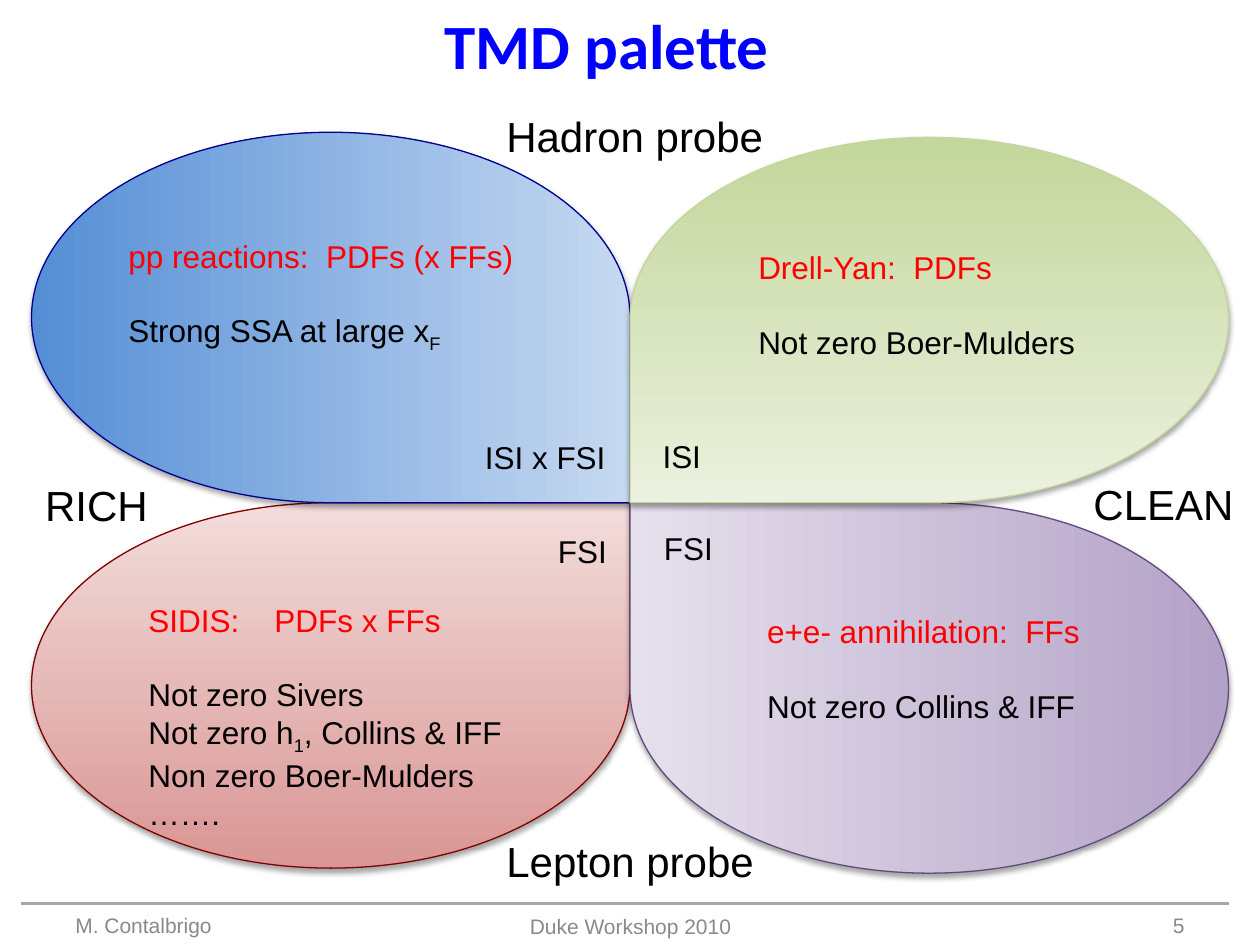
from lxml import etree
from pptx import Presentation
from pptx.dml.color import RGBColor
from pptx.enum.shapes import MSO_CONNECTOR, MSO_SHAPE
from pptx.enum.text import MSO_ANCHOR, PP_ALIGN
from pptx.oxml import parse_xml
from pptx.oxml.ns import nsdecls, qn
from pptx.util import Inches, Pt

TEARDROP = MSO_SHAPE.TEAR
STRAIGHT = MSO_CONNECTOR.STRAIGHT
TOP, MIDDLE, BOTTOM = MSO_ANCHOR.TOP, MSO_ANCHOR.MIDDLE, MSO_ANCHOR.BOTTOM
LEFT, CENTER, RIGHT = PP_ALIGN.LEFT, PP_ALIGN.CENTER, PP_ALIGN.RIGHT
TITLE_ONLY = 5

THEME = {
    "title": {"name": "Calibri", "size": Pt(36), "bold": True, "color": "0000FF"},
    "heading": {"name": "Arial", "size": Pt(18), "color": "FF0000"},
    "body": {"name": "Arial", "size": Pt(18), "color": "000000"},
    "axis": {"name": "Arial", "size": Pt(24), "color": "000000"},
    "footer": {"name": "Arial", "size": Pt(12), "color": "898989"},
    "rule": "A6A6A6",
}
HEADING_GAP = Pt(21)

# The petals meet at this point; each lists its side of it, rotation and colours.
CENTRE_X, CENTRE_Y = 5, 3.99
PETAL_WIDTH = 4.75
PETALS = [
    # side x, side y, rotation, height, dark, light, outline
    (-1, 1, 0, 2.9, "D99694", "F2DCDB", "800000"),
    (-1, -1, 90, 2.94, "558ED5", "C6D9F1", "000090"),
    (1, 1, 270, 2.94, "B3A2C7", "E6E0EC", "604A7B"),
    (1, -1, 180, 2.9, "C3D69B", "EBF1DE", "C3D69B"),
]

# In a body line, every second part is a subscript.
REACTIONS = [
    # box, heading label, heading value, tab position, body lines
    ((5.99, 4.81, 3.06, 1.01), "e+e- annihilation:", "FFs", 2.05,
     [("Not zero Collins & IFF",)]),
    ((5.92, 1.92, 3, 1.01), "Drell-Yan:", "PDFs", 1.23,
     [("Not zero Boer-Mulders",)]),
    ((1.08, 4.72, 3.25, 1.92), "SIDIS:", "PDFs x FFs", 1,
     [("Not zero Sivers",), ("Not zero h", "1", ", Collins & IFF"),
      ("Non zero Boer-Mulders",), ("…….",)]),
    ((0.92, 1.83, 3.42, 1.01), "pp reactions:", "PDFs (x FFs)", 1.57,
     [("Strong SSA at large x", "F")]),
]

LABELS = [
    # text, box, style
    ("ISI", (5.16, 3.42, 0.51, 0.4), "body"),
    ("FSI", (5.17, 4.15, 0.59, 0.4), "body"),
    ("ISI x FSI", (3.75, 3.43, 1.17, 0.4), "body"),
    ("FSI", (4.33, 4.17, 0.59, 0.4), "body"),
    ("RICH", (0.26, 3.76, 1.02, 0.5), "axis"),
    ("CLEAN", (8.58, 3.75, 1.32, 0.5), "axis"),
    ("Hadron probe", (3.92, 0.83, 2.26, 0.5), "axis"),
    ("Lepton probe", (3.92, 6.58, 2.19, 0.5), "axis"),
]

FOOTERS = [
    ("M. Contalbrigo", (0.5, 7.09, 2.33, 0.4), LEFT),
    ("5", (7.17, 7.09, 2.33, 0.4), RIGHT),
    ("Duke Workshop 2010", (3.42, 7.1, 3.17, 0.4), CENTER),
]

TITLE = ("TMD palette", (3.41, 0, 2.81, 0.71))
RULE = (0.17, 7.17, 9.75, 7.17)


def add_run(paragraph, text, style):
    run = paragraph.add_run()
    run.text = text
    for name, value in THEME[style].items():
        if name == "color":
            run.font.color.rgb = RGBColor.from_string(value)
        else:
            setattr(run.font, name, value)
    return run


def add_box(slide, box, wrap=True, anchor=TOP):
    """Add an empty text box and return its text frame."""
    frame = slide.shapes.add_textbox(*map(Inches, box)).text_frame
    frame.word_wrap = wrap
    frame.vertical_anchor = anchor
    return frame


def add_petal(slide, side_x, side_y, rotation, height, dark, light, outline):
    width, tall = PETAL_WIDTH, height
    middle_x = CENTRE_X + side_x * width / 2
    middle_y = CENTRE_Y + side_y * tall / 2
    if rotation % 180:
        width, tall = tall, width
    petal = slide.shapes.add_shape(
        TEARDROP, Inches(middle_x - width / 2), Inches(middle_y - tall / 2),
        Inches(width), Inches(tall))
    petal.rotation = rotation
    petal.fill.gradient()
    petal.fill.gradient_angle = 90
    for stop, color in zip(petal.fill.gradient_stops, (dark, light)):
        stop.color.rgb = RGBColor.from_string(color)
    petal.line.color.rgb = RGBColor.from_string(outline)
    petal.line.width = Pt(0.75)
    petal.shadow.inherit = False
    effects = petal.element.spPr.find(qn("a:effectLst"))
    effects.append(parse_xml(
        f'<a:outerShdw {nsdecls("a")} blurRad="{Pt(3.1)}" dist="{Pt(1.8)}" '
        'dir="5400000" rotWithShape="0"><a:srgbClr val="000000">'
        '<a:alpha val="35000"/></a:srgbClr></a:outerShdw>'))


def add_reaction(slide, box, label, value, tab, lines):
    frame = add_box(slide, box)
    heading = frame.paragraphs[0]
    add_run(heading, f"{label}\t{value}", "heading")
    tabs = etree.SubElement(heading._p.get_or_add_pPr(), qn("a:tabLst"))
    etree.SubElement(tabs, qn("a:tab"), pos=str(Inches(tab)), algn="l")
    for number, parts in enumerate(lines):
        paragraph = frame.add_paragraph()
        if number == 0:
            paragraph.space_before = HEADING_GAP
        for index, text in enumerate(parts):
            run = add_run(paragraph, text, "body")
            if index % 2:
                run._r.get_or_add_rPr().set("baseline", "-25000")


def set_title(slide):
    text, box = TITLE
    title = slide.shapes.title
    title.left, title.top, title.width, title.height = map(Inches, box)
    title.text_frame.word_wrap = False
    title.text_frame.vertical_anchor = MIDDLE
    paragraph = title.text_frame.paragraphs[0]
    paragraph.alignment = CENTER
    add_run(paragraph, text, "title")


def add_rule(slide):
    rule = slide.shapes.add_connector(STRAIGHT, *map(Inches, RULE))
    rule.line.color.rgb = RGBColor.from_string(THEME["rule"])
    rule.line.width = Pt(2)
    etree.SubElement(rule.element.spPr, qn("a:effectLst"))


def main():
    presentation = Presentation()
    presentation.slide_width, presentation.slide_height = Inches(10), Inches(7.5)
    slide = presentation.slides.add_slide(presentation.slide_layouts[TITLE_ONLY])
    set_title(slide)
    for petal in PETALS:
        add_petal(slide, *petal)
    for reaction in REACTIONS:
        add_reaction(slide, *reaction)
    for text, box, style in LABELS:
        add_run(add_box(slide, box, wrap=False).paragraphs[0], text, style)
    add_rule(slide)
    for text, box, alignment in FOOTERS:
        paragraph = add_box(slide, box, anchor=BOTTOM).paragraphs[0]
        paragraph.alignment = alignment
        add_run(paragraph, text, "footer")
    presentation.save("out.pptx")


if __name__ == "__main__":
    main()
